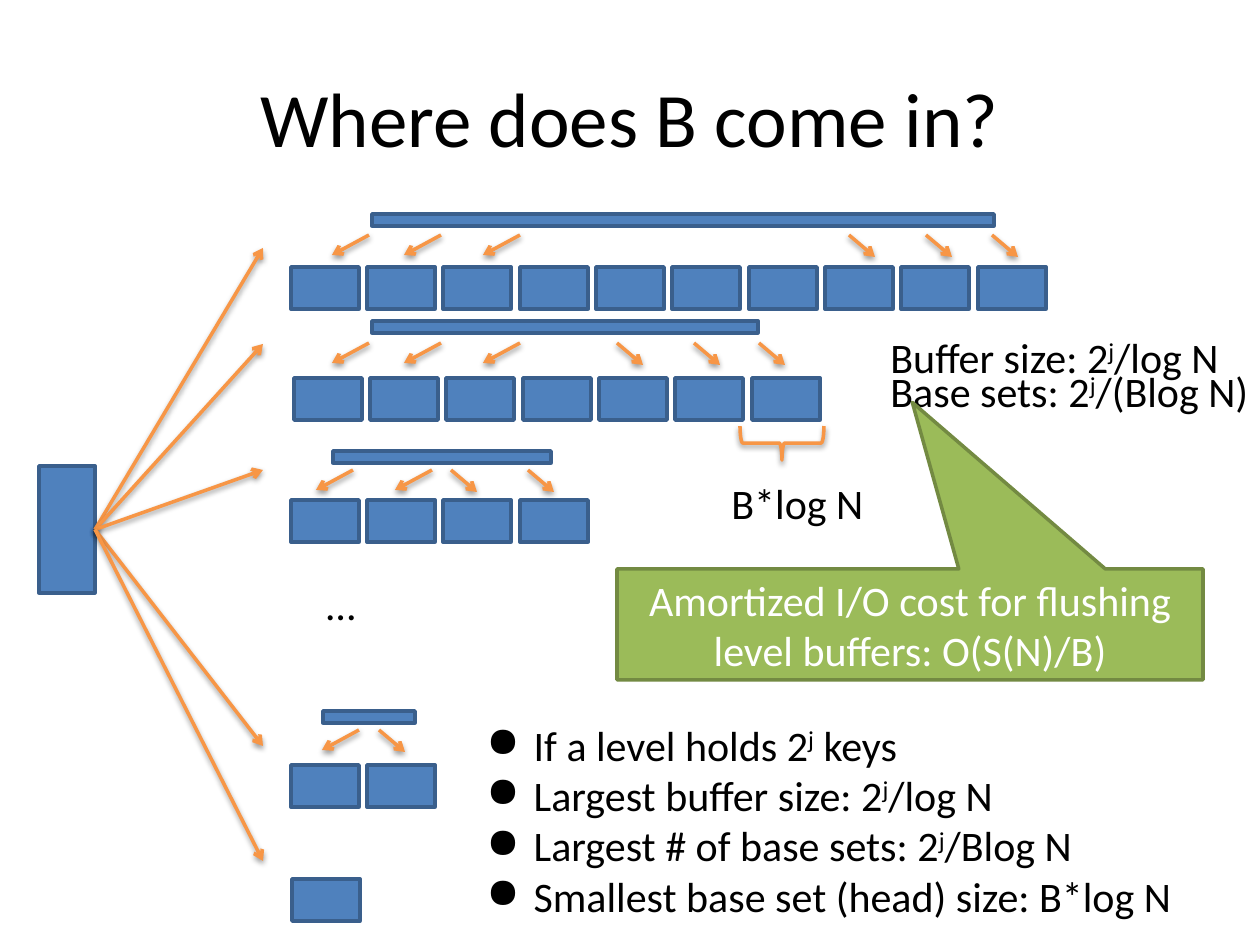
from lxml import etree
from pptx import Presentation
from pptx import util as u
from pptx.dml.color import RGBColor
from pptx.enum import shapes, text
from pptx.oxml.ns import qn

BLUE = RGBColor(0x4F, 0x81, 0xBD)
NAVY = RGBColor(0x3A, 0x5F, 0x8C)
ORANGE = RGBColor(0xF7, 0x96, 0x46)
GREEN = RGBColor(0x9B, 0xBB, 0x59)
OLIVE = RGBColor(0x73, 0x8A, 0x42)
BLACK = RGBColor(0, 0, 0)
WHITE = RGBColor(0xFF, 0xFF, 0xFF)

SHAPE = shapes.MSO_SHAPE
LEFT, CENTER = text.PP_ALIGN.LEFT, text.PP_ALIGN.CENTER
GROW = text.MSO_AUTO_SIZE.SHAPE_TO_FIT_TEXT


def px(n):
    return u.Emu(round(n * 914400 / 126))


def child(parent, tag, **attributes):
    return etree.SubElement(parent, qn(tag), attributes)


class Painter:
    font = "Calibri"
    line_width = u.Pt(2)

    def __init__(self, page):
        self.page = page

    def shape(self, kind, left, top, width, height, fill=BLUE, line=NAVY):
        box = self.page.shapes.add_shape(kind, px(left), px(top), px(width), px(height))
        box.shadow.inherit = False
        if fill is None:
            box.fill.background()
        else:
            box.fill.solid()
            box.fill.fore_color.rgb = fill
        box.line.color.rgb = line
        box.line.width = self.line_width
        return box

    def soft_shadow(self, box):
        properties = box._element.spPr
        effects = properties.find(qn("a:effectLst"))
        if effects is None:
            effects = child(properties, "a:effectLst")
        shadow = child(effects, "a:outerShdw", blurRad="40000", dist="20000",
                       dir="5400000", rotWithShape="0")
        child(child(shadow, "a:srgbClr", val="000000"), "a:alpha", val="38000")

    def arrow(self, x1, y1, x2, y2, source=None):
        line = self.page.shapes.add_connector(
            shapes.MSO_CONNECTOR.STRAIGHT, px(x1), px(y1), px(x2), px(y2))
        if source is not None:
            line.begin_connect(source, 3)
        line.line.color.rgb = ORANGE
        line.line.width = self.line_width
        child(line._element.spPr.find(qn("a:ln")), "a:tailEnd", type="arrow")
        self.soft_shadow(line)

    def add_text(self, box, lines, size=24, color=BLACK, align=LEFT, bullet=None, **frame):
        """Each line is plain text; a part between ^ marks is superscript."""
        for name, value in frame.items():
            setattr(box.text_frame, name, value)
        for i, line in enumerate(lines):
            para = box.text_frame.paragraphs[0] if i == 0 else box.text_frame.add_paragraph()
            para.alignment = align
            if bullet:
                properties = para._p.get_or_add_pPr()
                properties.set("marL", "342900")
                properties.set("indent", "-342900")
                child(properties, "a:buChar", char=bullet)
            for j, part in enumerate(line.split("^")):
                span = para.add_run()
                span.text = part
                for name, value in {"name": self.font, "size": u.Pt(size)}.items():
                    setattr(span.font, name, value)
                span.font.color.rgb = color
                if j % 2:
                    span._r.get_or_add_rPr().set("baseline", "30000")

    def label(self, left, top, width, height, *lines, **style):
        box = self.page.shapes.add_textbox(px(left), px(top), px(width), px(height))
        self.add_text(box, lines, **{"word_wrap": False, "auto_size": GROW, **style})


def main():
    deck = Presentation()
    deck.slide_width, deck.slide_height = u.Inches(10), u.Inches(7.5)
    painter = Painter(deck.slides.add_slide(deck.slide_layouts[6]))

    # Title
    painter.label(63, 38, 1134, 158, "Where does B come in?", size=44, align=CENTER,
                  word_wrap=True, auto_size=text.MSO_AUTO_SIZE.NONE,
                  vertical_anchor=text.MSO_ANCHOR.MIDDLE)

    # Base sets of each level: left, top, count
    for left, top, count in [(291, 267, 10), (294, 378, 7), (291, 500, 4),
                             (291, 765, 2), (292, 879, 1)]:
        for i in range(count):
            painter.shape(SHAPE.RECTANGLE, left + i * 229 // 3, top, 68, 42)

    # Level buffers: left, top, width
    for left, top, width in [(372, 214, 622), (372, 321, 386), (333, 451, 218), (323, 711, 92)]:
        painter.shape(SHAPE.RECTANGLE, left, top, width, 12)

    # Flush arrows: top, starts leaning left, starts leaning right
    for top, leftward, rightward in [(235, (369, 441, 520), (849, 926, 992)),
                                     (343, (369, 441, 520), (617, 694, 759)),
                                     (470, (353, 432), (451, 528)),
                                     (730, (359,), (379,))]:
        for x in leftward:
            painter.arrow(x, top, x - 37, top + 20)
        for x in rightward:
            painter.arrow(x, top, x + 26, top + 22)

    # Root and its arrows to the levels
    root = painter.shape(SHAPE.RECTANGLE, 39, 466, 56, 127)
    for y in (248, 344, 470, 746, 861):
        painter.arrow(95, 529, 263, y, source=root)

    # Size labels
    painter.label(878, 359, 397, 63, "Base sets: 2^j^/(Blog N)")
    painter.label(878, 325, 358, 63, "Buffer size: 2^j^/log N")
    brace = painter.shape(SHAPE.LEFT_BRACE, 765, 401, 34, 84, fill=None, line=ORANGE)
    brace.rotation = 270
    painter.soft_shadow(brace)
    painter.label(719, 471, 159, 63, "B*log N")
    painter.label(314, 572, 55, 63, "…")

    # Cost callout
    callout = painter.shape(SHAPE.RECTANGULAR_CALLOUT, 617, 569, 586, 111, GREEN, OLIVE)
    callout.adjustments[0], callout.adjustments[1] = 0.004, -2
    painter.add_text(callout, ["Amortized I/O cost for flushing level buffers: O(S(N)/B)"],
                     color=WHITE, align=CENTER, word_wrap=True,
                     vertical_anchor=text.MSO_ANCHOR.MIDDLE)

    # Summary list
    painter.label(474, 713, 813, 217,
                  "If a level holds 2^j^ keys",
                  "Largest buffer size: 2^j^/log N",
                  "Largest # of base sets: 2^j^/Blog N",
                  "Smallest base set (head) size: B*log N",
                  bullet="●", word_wrap=True)

    deck.save("out.pptx")


if __name__ == "__main__":
    main()
